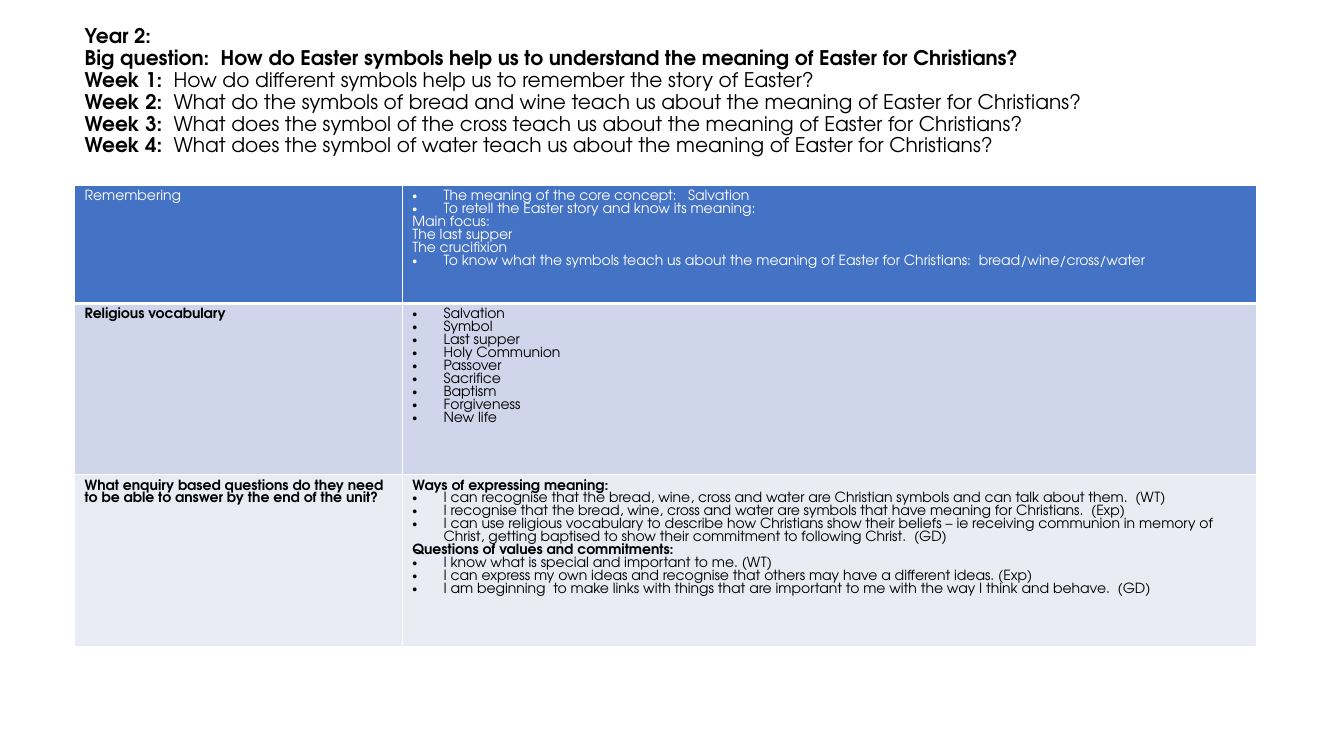
from dataclasses import dataclass

from lxml import etree
from pptx import Presentation
from pptx import util as u
from pptx.dml.color import RGBColor
from pptx.enum import text
from pptx.oxml.ns import qn


@dataclass(frozen=True)
class Theme:
    font: str = "TeX Gyre Adventor"
    title_size: float = 14.4
    title_end_size: float = 28
    table_size: float = 10
    title_spacing: float = 0.9
    indent: float = 0.31
    black: str = "000000"
    white: str = "FFFFFF"
    header: str = "4472C4"
    band_dark: str = "CFD5EA"
    band_light: str = "E9EBF5"


@dataclass(frozen=True)
class Line:
    text: str
    bold: bool = False
    bullet: bool = False


@dataclass(frozen=True)
class Row:
    height: float
    fill: str
    color: str
    label: Line
    lines: list[Line]
    bottom_border: float = 1


T = Theme()


def bullets(*items: str) -> list[Line]:
    return [Line(item, bullet=True) for item in items]


TITLE = [
    ("Year 2:", ""),
    ("Big question:  How do Easter symbols help us to understand the meaning of Easter for Christians?", ""),
    ("Week 1:  ", "How do different symbols help us to remember the story of Easter?"),
    ("Week 2:  ", "What do the symbols of bread and wine teach us about the meaning of Easter for Christians?"),
    ("Week 3:  ", "What does the symbol of the cross teach us about the meaning of Easter for Christians?"),
    ("Week 4:  ", "What does the symbol of water teach us about the meaning of Easter for Christians?"),
]

ROWS = [
    Row(1.17, T.header, T.white, Line("Remembering"), [
        *bullets("The meaning of the core concept:   Salvation",
                 "To retell the Easter story and know its meaning:"),
        Line("Main focus:"),
        Line("The last supper"),
        Line("The crucifixion"),
        *bullets("To know what the symbols teach us about the meaning of Easter for Christians:  "
                 "bread/wine/cross/water"),
    ], bottom_border=3),
    Row(1.7, T.band_dark, T.black, Line("Religious vocabulary", bold=True),
        bullets("Salvation", "Symbol", "Last supper", "Holy Communion", "Passover",
                "Sacrifice", "Baptism", "Forgiveness", "New life")),
    Row(1.7, T.band_light, T.black,
        Line("What enquiry based questions do they need to be able to answer by the end of the unit?",
             bold=True), [
            Line("Ways of expressing meaning:", bold=True),
            *bullets("I can recognise that the bread, wine, cross and water are Christian symbols "
                     "and can talk about them.  (WT)",
                     "I recognise that the bread, wine, cross and water are symbols that have "
                     "meaning for Christians.  (Exp)",
                     "I can use religious vocabulary to describe how Christians show their beliefs "
                     "– ie receiving communion in memory of Christ, getting baptised to show their "
                     "commitment to following Christ.  (GD)"),
            Line("Questions of values and commitments:", bold=True),
            *bullets("I know what is special and important to me. (WT)",
                     "I can express my own ideas and recognise that others may have a different "
                     "ideas. (Exp)",
                     "I am beginning  to make links with things that are important to me with the "
                     "way I think and behave.  (GD)"),
        ]),
]


def style_run(r, size: float, color: str, bold: bool) -> None:
    r.font.name = T.font
    r.font.size = u.Pt(size)
    r.font.bold = bold
    r.font.color.rgb = RGBColor.from_string(color)


def draw_title(sp) -> None:
    sp.left, sp.top, sp.width, sp.height = map(u.Inches, (0.74, 0.45, 10.11, 1.39))
    tf = sp.text_frame
    tf.word_wrap = True
    tf.auto_size = text.MSO_AUTO_SIZE.NONE
    tf.vertical_anchor = text.MSO_ANCHOR.MIDDLE
    p = tf.paragraphs[0]
    p.alignment = text.PP_ALIGN.LEFT
    p.line_spacing = T.title_spacing
    for label, question in TITLE:
        for part, bold in ((label, True), (question, False)):
            if part:
                r = p.add_run()
                r.text = part
                style_run(r, T.title_size, T.black, bold)
        p.add_line_break()
    for br in p._p.findall(qn("a:br")):
        add_break_font(br, "a:rPr", T.title_size)
    add_break_font(p._p, "a:endParaRPr", T.title_end_size)


def add_break_font(parent, tag: str, size: float) -> None:
    props = etree.SubElement(parent, qn(tag), sz=str(round(size * 100)))
    etree.SubElement(props, qn("a:latin"), typeface=T.font)


def add_bullet(p) -> None:
    pPr = p._p.get_or_add_pPr()
    pPr.set("marL", str(u.Inches(T.indent)))
    pPr.set("indent", str(-u.Inches(T.indent)))
    etree.SubElement(pPr, qn("a:buFont"), typeface="Arial")
    etree.SubElement(pPr, qn("a:buChar"), char="•")


def set_borders(cell, row: Row) -> None:
    tcPr = cell._tc.get_or_add_tcPr()
    widths = {"L": 1, "R": 1, "T": 1, "B": row.bottom_border}
    for i, (side, width) in enumerate(widths.items()):
        ln = etree.Element(qn(f"a:ln{side}"), w=str(u.Pt(width)))
        fill = etree.SubElement(ln, qn("a:solidFill"))
        etree.SubElement(fill, qn("a:srgbClr"), val=T.white)
        tcPr.insert(i, ln)


def fill_cell(cell, row: Row, lines: list[Line]) -> None:
    cell.fill.solid()
    cell.fill.fore_color.rgb = RGBColor.from_string(row.fill)
    set_borders(cell, row)
    tf = cell.text_frame
    tf.text = "\n".join(line.text for line in lines)
    for p, line in zip(tf.paragraphs, lines):
        style_run(p.runs[0], T.table_size, row.color, line.bold)
        if line.bullet:
            add_bullet(p)


def draw_table(s) -> None:
    frame = s.shapes.add_table(len(ROWS), 2, u.Inches(0.74), u.Inches(1.84),
                               u.Inches(11.72), u.Inches(4.57))
    table = frame.table
    for column, width in zip(table.columns, (3.25, 8.47)):
        column.width = u.Inches(width)
    for i, row in enumerate(ROWS):
        table.rows[i].height = u.Inches(row.height)
        fill_cell(table.cell(i, 0), row, [row.label])
        fill_cell(table.cell(i, 1), row, row.lines)


def main() -> None:
    prs = Presentation()
    prs.slide_width, prs.slide_height = u.Inches(13.33), u.Inches(7.5)
    s = prs.slides.add_slide(prs.slide_layouts[5])
    draw_title(s.shapes.title)
    draw_table(s)
    prs.save("out.pptx")


if __name__ == "__main__":
    main()
